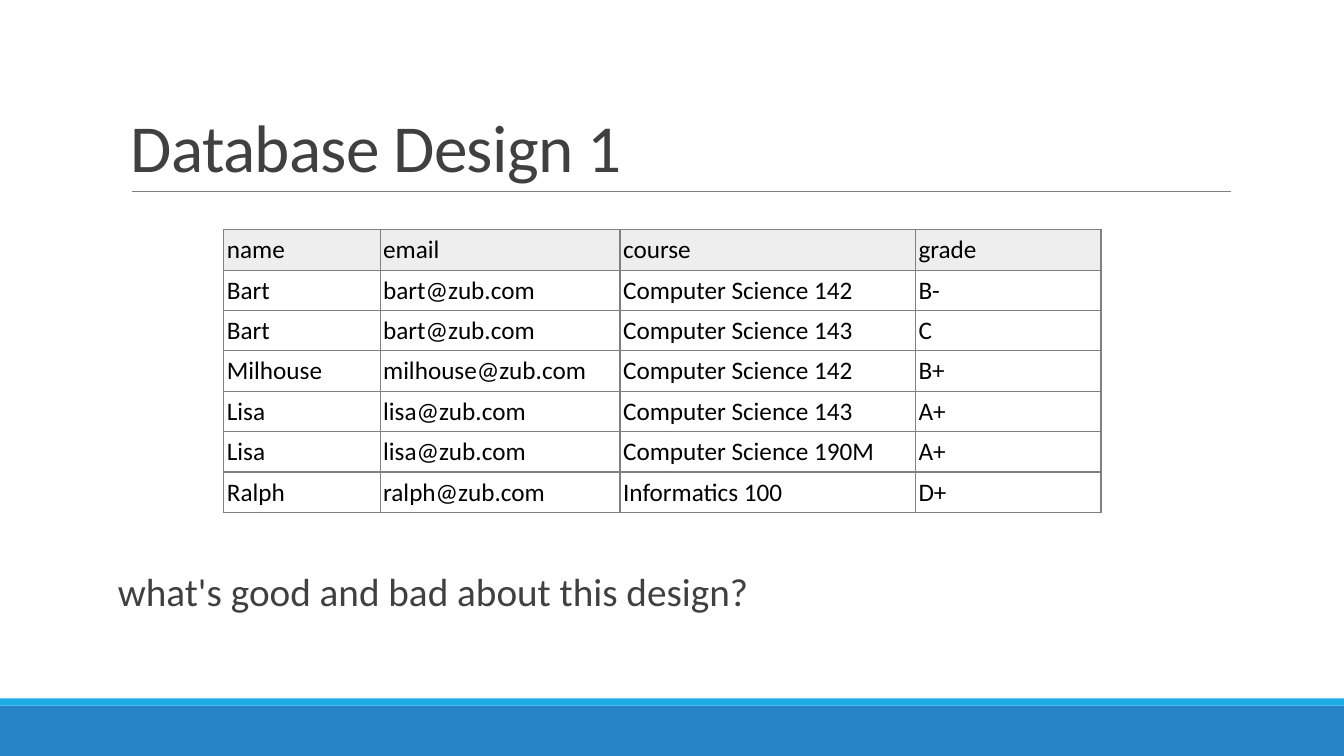
import lxml.etree
import pptx
import pptx.dml.color
import pptx.enum.shapes
import pptx.enum.text
import pptx.oxml.ns
import pptx.util

Inches = pptx.util.Inches
Pt = pptx.util.Pt
RGBColor = pptx.dml.color.RGBColor
MSO_ANCHOR = pptx.enum.text.MSO_ANCHOR
qn = pptx.oxml.ns.qn

BLUE = RGBColor(0x26, 0x83, 0xC6)
CYAN = RGBColor(0x1C, 0xAD, 0xE4)
GRAY = RGBColor(0x80, 0x80, 0x80)
DARK = RGBColor(0x40, 0x40, 0x40)
BLACK = RGBColor(0x00, 0x00, 0x00)
WHITE = RGBColor(0xFF, 0xFF, 0xFF)
HEADER = RGBColor(0xEE, 0xEE, 0xEE)

FONT = "Calibri"
COLUMN_WIDTHS = [1.55, 2.38, 2.93, 1.84]
ROW_HEIGHT = 0.4
GRADES = [
    ["name", "email", "course", "grade"],
    ["Bart", "bart@zub.com", "Computer Science 142", "B-"],
    ["Bart", "bart@zub.com", "Computer Science 143", "C"],
    ["Milhouse", "milhouse@zub.com", "Computer Science 142", "B+"],
    ["Lisa", "lisa@zub.com", "Computer Science 143", "A+"],
    ["Lisa", "lisa@zub.com", "Computer Science 190M", "A+"],
    ["Ralph", "ralph@zub.com", "Informatics 100", "D+"],
]


def add_run(p, text, size, color):
    """Add a styled run to a paragraph."""
    r = p.add_run()
    r.text = text
    r.font.name = FONT
    r.font.size = Pt(size)
    r.font.color.rgb = color
    return r


def add_band(s, top, height, color):
    """Add a plain band across the full slide width."""
    sp = s.shapes.add_shape(
        pptx.enum.shapes.MSO_SHAPE.RECTANGLE,
        Inches(0), Inches(top), Inches(13.33), Inches(height))
    sp.shadow.inherit = False
    sp.fill.solid()
    sp.fill.fore_color.rgb = color
    sp.line.fill.background()


def add_rule(s, left, right, y):
    """Add the thin horizontal line under the title."""
    line = s.shapes.add_connector(
        pptx.enum.shapes.MSO_CONNECTOR.STRAIGHT,
        Inches(left), Inches(y), Inches(right), Inches(y))
    line.line.color.rgb = GRAY
    line.line.width = Pt(0.5)
    sp_pr = line._element.find(qn("p:spPr"))
    lxml.etree.SubElement(sp_pr, qn("a:effectLst"))


def add_text(s, left, top, height, text, size, anchor, spacing):
    """Add a one-line text box and return its frame, paragraph and run."""
    sp = s.shapes.add_textbox(
        Inches(left), Inches(top), Inches(11), Inches(height))
    tf = sp.text_frame
    tf.word_wrap = True
    tf.vertical_anchor = anchor
    p = tf.paragraphs[0]
    p.line_spacing = spacing
    return tf, p, add_run(p, text, size, DARK)


def add_title(s, text):
    """Add the title with slightly tightened letters."""
    tf, p, r = add_text(s, 1.2, 0.31, 1.59, text, 48, MSO_ANCHOR.BOTTOM, 0.85)
    r.font._element.set("spc", "-50")


def add_question(s, text):
    """Add the indented question below the table."""
    tf, p, r = add_text(s, 1.07, 5.63, 1.63, text, 28, MSO_ANCHOR.TOP, 0.9)
    tf.margin_left = tf.margin_right = 0
    p.space_before = Pt(12)
    p.space_after = Pt(2)
    p._p.get_or_add_pPr().set("marL", str(Inches(0.1)))


def add_borders(cell):
    """Draw a thin gray line on all four sides of a cell."""
    tc_pr = cell._tc.get_or_add_tcPr()
    for i, side in enumerate(["lnL", "lnR", "lnT", "lnB"]):
        ln = lxml.etree.Element(qn("a:" + side), w=str(Pt(1)))
        fill = lxml.etree.SubElement(ln, qn("a:solidFill"))
        lxml.etree.SubElement(fill, qn("a:srgbClr"), val=str(GRAY))
        tc_pr.insert(i, ln)


def fill_cell(cell, text, color):
    """Set the text, fill, margins and borders of a cell."""
    cell.fill.solid()
    cell.fill.fore_color.rgb = color
    cell.vertical_anchor = MSO_ANCHOR.MIDDLE
    cell.margin_left = cell.margin_right = Inches(0.03)
    cell.margin_top = cell.margin_bottom = Inches(0.05)
    add_run(cell.text_frame.paragraphs[0], text, 18, BLACK)
    add_borders(cell)


def add_grades(s, left, top):
    """Add the table of students, courses and grades."""
    table = s.shapes.add_table(
        len(GRADES), len(COLUMN_WIDTHS), Inches(left), Inches(top),
        Inches(sum(COLUMN_WIDTHS)), Inches(ROW_HEIGHT * len(GRADES))).table
    table.horz_banding = False
    table.first_row = False
    for column, width in zip(table.columns, COLUMN_WIDTHS):
        column.width = Inches(width)
    for i, row in enumerate(GRADES):
        for j, text in enumerate(row):
            fill_cell(table.cell(i, j), text, WHITE if i else HEADER)


def main():
    """Build and save the slide."""
    prs = pptx.Presentation()
    prs.slide_width = Inches(13.33)
    prs.slide_height = Inches(7.5)
    s = prs.slides.add_slide(prs.slide_layouts[6])
    add_band(s, 7, 0.5, BLUE)
    add_band(s, 6.93, 0.07, CYAN)
    add_rule(s, 1.31, 12.21, 1.9)
    add_title(s, "Database Design 1")
    add_question(s, "what's good and bad about this design?")
    add_grades(s, 2.22, 2.28)
    prs.save("out.pptx")


if __name__ == "__main__":
    main()
